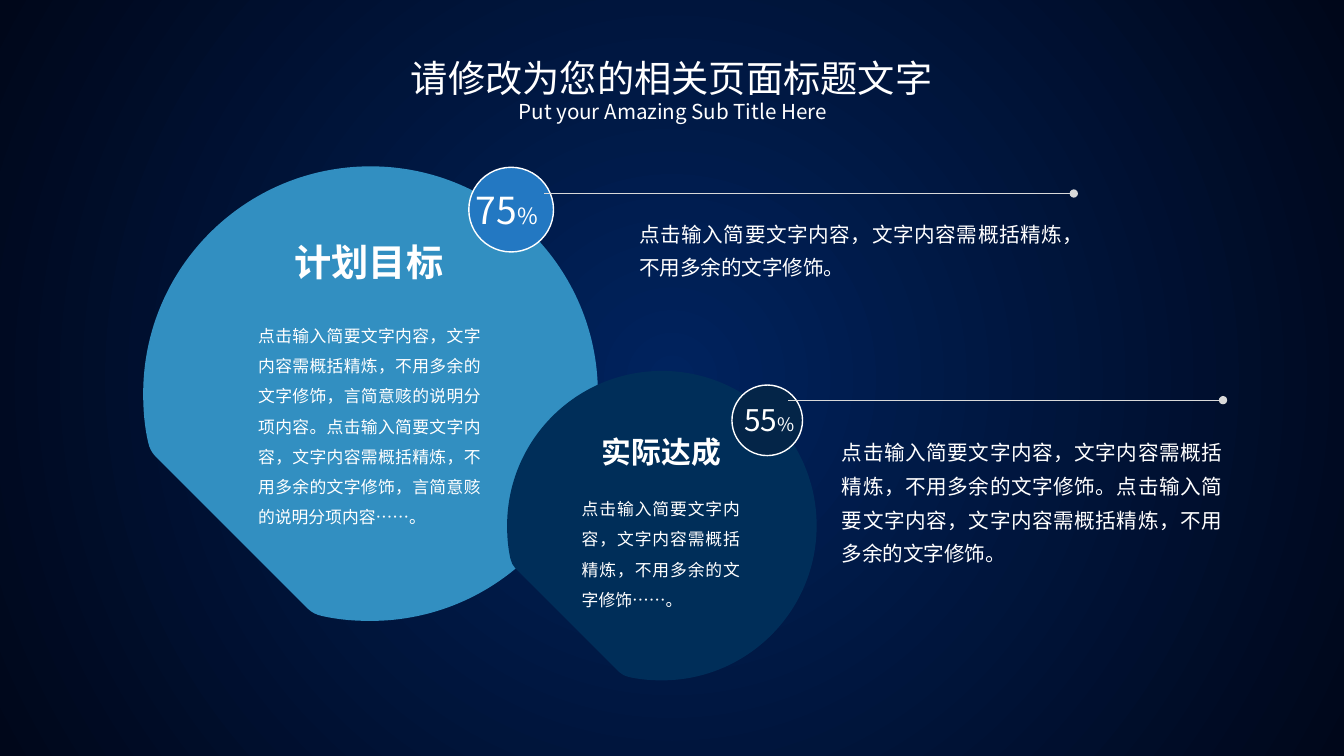
from lxml import etree
from pptx import Presentation
from pptx.dml.color import RGBColor
from pptx.enum.shapes import MSO_CONNECTOR, MSO_SHAPE
from pptx.enum.text import MSO_ANCHOR, MSO_AUTO_SIZE, PP_ALIGN
from pptx.oxml.ns import qn
from pptx.util import Inches, Pt

LEFT, CENTER, JUSTIFY = PP_ALIGN.LEFT, PP_ALIGN.CENTER, PP_ALIGN.JUSTIFY
OVAL, STRAIGHT = MSO_SHAPE.OVAL, MSO_CONNECTOR.STRAIGHT
FONT = "Noto Sans CJK SC"
WHITE = RGBColor(0xFF, 0xFF, 0xFF)
LINE_GRAY = RGBColor(0xD9, 0xD9, 0xD9)
GLOW_BLUE = RGBColor(0x00, 0x23, 0x5E)
NIGHT_BLUE = RGBColor(0x00, 0x07, 0x1A)
PLAN_BLUE = RGBColor(0x32, 0x8F, 0xC1)
PLAN_BADGE = RGBColor(0x23, 0x78, 0xC2)
ACTUAL_BLUE = RGBColor(0x00, 0x2E, 0x59)
ACTUAL_BADGE = RGBColor(0x04, 0x25, 0x48)

presentation = Presentation()
presentation.slide_width = Inches(13.33)
presentation.slide_height = Inches(7.5)
slide = presentation.slides.add_slide(presentation.slide_layouts[5])
shapes = slide.shapes


def write_text(shape, box, runs, alignment, spacing=1.0, bold=False, inset=0, wrap=True):
    """Place a text shape and fill it with (text, size) runs."""
    shape.left, shape.top, shape.width, shape.height = map(Inches, box)
    frame = shape.text_frame
    frame_format = {
        "margin_left": Inches(inset), "margin_right": Inches(inset),
        "margin_top": Inches(inset / 2), "margin_bottom": Inches(inset / 2),
        "vertical_anchor": MSO_ANCHOR.TOP, "word_wrap": wrap,
        "auto_size": MSO_AUTO_SIZE.SHAPE_TO_FIT_TEXT,
    }
    for name, value in frame_format.items():
        setattr(frame, name, value)
    paragraph = frame.paragraphs[0]
    paragraph.alignment = alignment
    paragraph.line_spacing = spacing
    for text, size in runs:
        run = paragraph.add_run()
        run.text = text
        for name, value in {"size": Pt(size), "bold": bold, "name": FONT}.items():
            setattr(run.font, name, value)
        run.font.color.rgb = WHITE
        east_asian = etree.SubElement(run.font._element, qn("a:ea"))
        east_asian.set("typeface", FONT)


# Background: circular glow
fill = slide.background.fill
fill.gradient()
for stop, color in zip(fill.gradient_stops, (GLOW_BLUE, NIGHT_BLUE)):
    stop.color.rgb = color
gradient = slide.element.find(".//" + qn("a:gradFill"))
gradient.remove(gradient.find(qn("a:lin")))
glow = etree.SubElement(gradient, qn("a:path"), path="circle")
etree.SubElement(glow, qn("a:fillToRect"), l="50000", t="50000", r="50000", b="50000")

# Title and subtitle
write_text(shapes.title, (2.73, 0.55, 7.87, 0.45),
           [("请修改为您的相关页面标题文字", 26.65)], CENTER)
write_text(shapes.add_textbox(0, 0, 0, 0), (3.87, 0.98, 5.6, 0.25),
           [("Put your Amazing Sub Title Here", 14.65)], CENTER)

# Disc outline in a 2000-unit square: a circle cut at the lower left
DISC_UNITS = 2000
disc_outline = [
    ("moveTo", [(1000, 0)]),
    ("cubicBezTo", [(1552, 0), (2000, 448), (2000, 1000)]),
    ("cubicBezTo", [(2000, 1552), (1552, 2000), (1000, 2000)]),
    ("cubicBezTo", [(925, 2000), (855, 1994), (785, 1978)]),
    ("cubicBezTo", [(762, 1973), (742, 1963), (725, 1947)]),
    ("lnTo", [(53, 1275)]),
    ("cubicBezTo", [(37, 1258), (27, 1238), (22, 1215)]),
    ("cubicBezTo", [(6, 1145), (0, 1075), (0, 1000)]),
    ("cubicBezTo", [(0, 448), (448, 0), (1000, 0)]),
    ("close", []),
]

panels = [
    {
        "disc": (1.42, 1.65, 4.51), "color": PLAN_BLUE,
        "badge": (4.65, 1.66, 0.84), "badge_color": PLAN_BADGE,
        "percent": (4.62, 1.81, 0.84, 0.55), "percent_runs": [("75", 26.65), ("%", 16)],
        "percent_alignment": LEFT, "percent_wrap": False,
        "heading": (2.81, 2.32, 1.7, 0.55), "heading_run": ("计划目标", 26.65),
        "body": (2.56, 3.13, 2.21, 2.12),
        "body_text": "点击输入简要文字内容，文字内容需概括精炼，不用多余的文字修饰，言简意赅的说明分项内容。"
                     "点击输入简要文字内容，文字内容需概括精炼，不用多余的文字修饰，言简意赅的说明分项内容……。",
        "leader": (10.65, 5.4, 1.92),
        "note": (6.34, 2.11, 4.2, 0.64),
        "note_text": "点击输入简要文字内容，文字内容需概括精炼，不用多余的文字修饰。",
    },
    {
        "disc": (5.03, 3.68, 3.07), "color": ACTUAL_BLUE,
        "badge": (7.26, 3.82, 0.7), "badge_color": ACTUAL_BADGE,
        "percent": (7.23, 3.94, 0.8, 0.46), "percent_runs": [("55", 21.35), ("%", 13.3)],
        "percent_alignment": CENTER, "percent_wrap": True,
        "heading": (5.86, 4.25, 1.4, 0.46), "heading_run": ("实际达成", 21.35),
        "body": (5.77, 4.85, 1.57, 1.21),
        "body_text": "点击输入简要文字内容，文字内容需概括精炼，不用多余的文字修饰……。",
        "leader": (12.13, 7.82, 3.97),
        "note": (8.35, 4.28, 3.77, 1.35),
        "note_text": "点击输入简要文字内容，文字内容需概括精炼，不用多余的文字修饰。"
                     "点击输入简要文字内容，文字内容需概括精炼，不用多余的文字修饰。",
    },
]

for panel in panels:
    # Cut disc: a freeform square whose outline becomes curves
    left, top, size = map(Inches, panel["disc"])
    builder = shapes.build_freeform(left, top)
    builder.add_line_segments([(left + size, top), (left + size, top + size), (left, top + size)])
    disc = builder.convert_to_shape()
    outline = disc._element.find(".//" + qn("a:path"))
    for segment in list(outline):
        outline.remove(segment)
    outline.set("w", str(DISC_UNITS))
    outline.set("h", str(DISC_UNITS))
    for command, points in disc_outline:
        segment = etree.SubElement(outline, qn("a:" + command))
        for x, y in points:
            etree.SubElement(segment, qn("a:pt"), x=str(x), y=str(y))
    disc.shadow.inherit = False
    disc.fill.solid()
    disc.fill.fore_color.rgb = panel["color"]
    disc.line.fill.background()

    # Percentage badge
    left, top, size = map(Inches, panel["badge"])
    badge = shapes.add_shape(OVAL, left, top, size, size)
    badge.shadow.inherit = False
    badge.fill.solid()
    badge.fill.fore_color.rgb = panel["badge_color"]
    badge.line.color.rgb = WHITE
    badge.line.width = Pt(1)

    # Texts
    write_text(shapes.add_textbox(0, 0, 0, 0), panel["heading"], [panel["heading_run"]],
               CENTER, bold=True, inset=0.1, wrap=False)
    write_text(shapes.add_textbox(0, 0, 0, 0), panel["percent"], panel["percent_runs"],
               panel["percent_alignment"], inset=0.1, wrap=panel["percent_wrap"])
    write_text(shapes.add_textbox(0, 0, 0, 0), panel["body"], [(panel["body_text"], 12)],
               JUSTIFY, spacing=1.5)
    write_text(shapes.add_textbox(0, 0, 0, 0), panel["note"], [(panel["note_text"], 14.65)],
               JUSTIFY, spacing=Pt(24))

    # Leader line with a dot at its right end
    start_x, end_x, line_y = map(Inches, panel["leader"])
    leader = shapes.add_connector(STRAIGHT, start_x, line_y, end_x, line_y)
    leader.line.color.rgb = LINE_GRAY
    leader.line.width = Pt(0.5)
    properties = leader._element.spPr
    etree.SubElement(properties.find(qn("a:ln")), qn("a:headEnd"), type="oval")
    etree.SubElement(properties, qn("a:effectLst"))

presentation.save("out.pptx")
